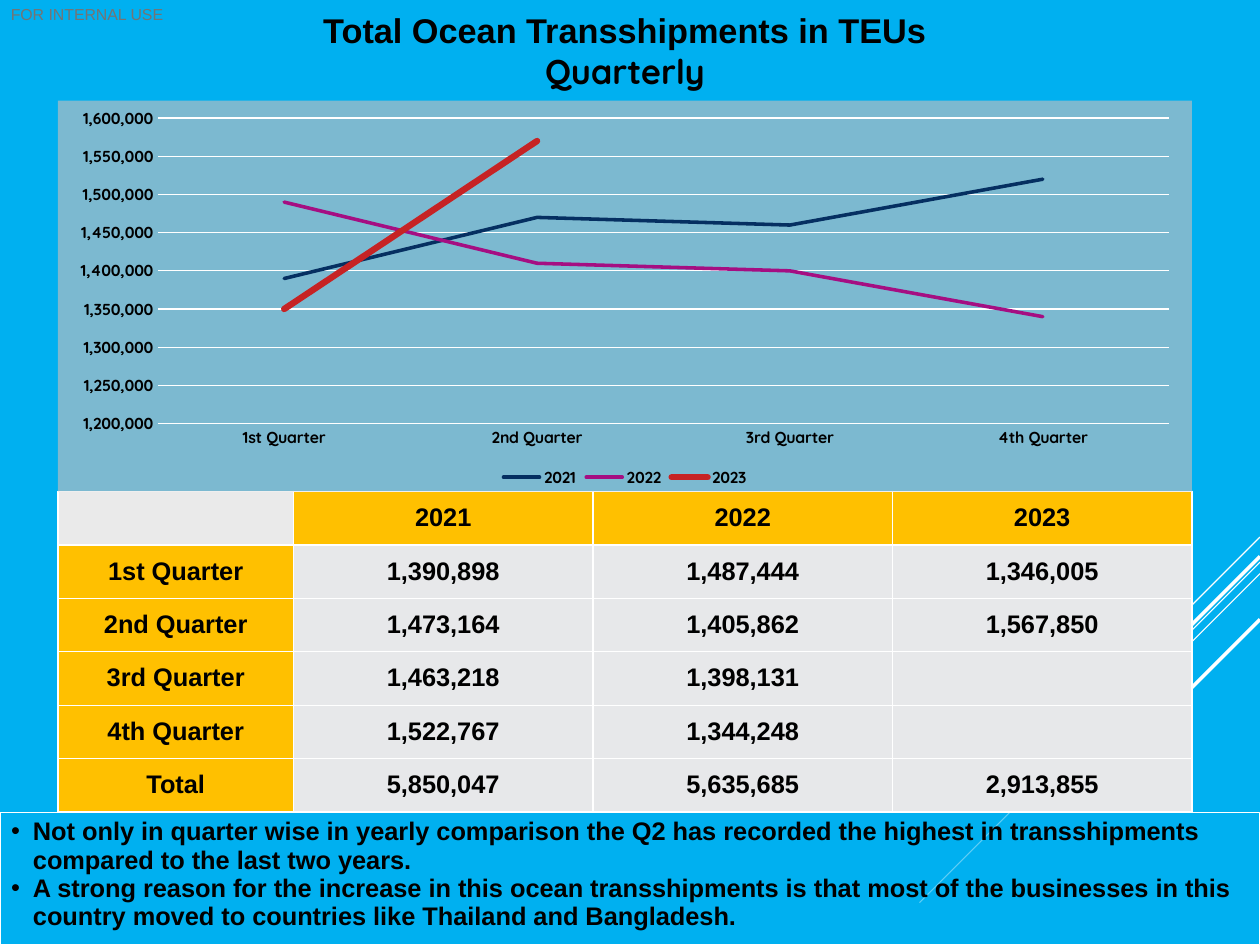
from lxml import etree
from pptx import Presentation
from pptx import util as u
from pptx.chart.data import CategoryChartData
from pptx.dml.color import RGBColor
from pptx.enum import chart as charts, shapes, text
from pptx.oxml import parse_xml
from pptx.oxml.ns import nsdecls, qn

COLORS = {
    "sky": "00B0F0", "white": "FFFFFF", "black": "000000", "gray": "747474",
    "gold": "FFC000", "corner": "EAEAEA", "cell": "E7E8EA", "panel": "BFBFBF",
    "2021": "052F61", "2022": "A50E82", "2023": "C62324",
}
WIDTH, HEIGHT = u.Cm(28), u.Cm(21)
LEFT, SPAN = 4.6, 90  # shares of the slide width, in percent
CHART_TOP, TABLE_TOP, NOTES_TOP = 10.64, 52, 85.97  # shares of the slide height

QUARTERS = ["1st Quarter", "2nd Quarter", "3rd Quarter", "4th Quarter"]
TEUS = {
    "2021": [1390898, 1473164, 1463218, 1522767],
    "2022": [1487444, 1405862, 1398131, 1344248],
    "2023": [1346005, 1567850, None, None],
}
STRIPES = [  # top, drop, line weight
    (56.83, 11, 0.75), (59.49, 36.03, 0.75), (60.7, 22.85, 0.75),
    (58.89, 20.98, 2.25), (65.54, 15.24, 2.25),
]
NOTES = [
    "Not only in quarter wise in yearly comparison the Q2 has recorded the highest "
    "in transshipments compared to the last two years.",
    "A strong reason for the increase in this ocean transshipments is that most of the "
    "businesses in this country moved to countries like Thailand and Bangladesh.",
]


def rgb(name):
    return RGBColor.from_string(COLORS[name])


def style_font(font, size=16, face="Arial", color="black", bold=True):
    font.size, font.name, font.bold = u.Pt(size), face, bold
    font.color.rgb = rgb(color)


def write(paragraph, words, align=text.PP_ALIGN.CENTER, spacing=0.93, **font):
    paragraph.alignment, paragraph.line_spacing = align, spacing
    run = paragraph.add_run()
    run.text = words
    style_font(run.font, **font)


def set_opacity(properties, percent):
    """Make the solid fill of a shape-properties element translucent."""
    color = properties.find(qn("a:solidFill"))[0]
    etree.SubElement(color, qn("a:alpha")).set("val", str(percent * 1000))


class Board:
    """Adds elements to one slide; lengths are percent of the slide's size."""

    def __init__(self, presentation):
        self.slide = presentation.slides.add_slide(presentation.slide_layouts[5])
        self.slide.background.fill.solid()
        self.slide.background.fill.fore_color.rgb = rgb("sky")

    def box(self, left, top, width, height):
        sizes = (WIDTH, HEIGHT, WIDTH, HEIGHT)
        return [u.Emu(int(share * size / 100))
                for share, size in zip((left, top, width, height), sizes)]

    def stripe(self, top, drop, weight):
        """Draw a 45 degree line down and left from the right edge."""
        run = drop * HEIGHT / WIDTH
        ends = self.box(100, top, 100 - run, top + drop)
        line = self.slide.shapes.add_connector(shapes.MSO_CONNECTOR.STRAIGHT, *ends)
        line.line.color.rgb, line.line.width = rgb("white"), u.Pt(weight)
        etree.SubElement(line.element.spPr, qn("a:effectLst"))

    def label(self, words, *place):
        frame = self.slide.shapes.add_textbox(*self.box(*place)).text_frame
        frame.margin_left = frame.margin_right = frame.margin_top = frame.margin_bottom = 0
        frame.vertical_anchor, frame.word_wrap = text.MSO_ANCHOR.MIDDLE, True
        write(frame.paragraphs[0], words, size=10, color="gray", bold=False)

    def title(self, first, second, *place):
        title = self.slide.shapes.title
        title.left, title.top, title.width, title.height = self.box(*place)
        frame = title.text_frame
        frame.auto_size, frame.vertical_anchor = text.MSO_AUTO_SIZE.NONE, text.MSO_ANCHOR.MIDDLE
        paragraph = frame.paragraphs[0]
        write(paragraph, first, spacing=1.0, size=21.6)
        paragraph.add_line_break()
        write(paragraph, second, spacing=1.0, size=21.6, face="Quicksand")

    def bullets(self, notes, *place):
        shape = self.slide.shapes.add_shape(shapes.MSO_SHAPE.RECTANGLE, *self.box(*place))
        shape.shadow.inherit = False
        shape.fill.solid()
        shape.fill.fore_color.rgb = rgb("sky")
        set_opacity(shape.element.spPr, 63)
        shape.line.color.rgb, shape.line.width = rgb("white"), u.Pt(0.75)
        frame = shape.text_frame
        frame.vertical_anchor, frame.word_wrap = text.MSO_ANCHOR.TOP, True
        for index, note in enumerate(notes):
            paragraph = frame.add_paragraph() if index else frame.paragraphs[0]
            write(paragraph, note, align=text.PP_ALIGN.LEFT)
            properties = paragraph._p.get_or_add_pPr()
            indent = u.Inches(0.19)
            properties.set("marL", str(indent))
            properties.set("indent", str(-indent))
            color = etree.SubElement(properties, qn("a:buClr"))
            etree.SubElement(color, qn("a:srgbClr")).set("val", COLORS["black"])
            etree.SubElement(properties, qn("a:buFont")).set("typeface", "Arial")
            etree.SubElement(properties, qn("a:buChar")).set("char", "•")

    def cell(self, cell, words, color):
        cell.margin_left = cell.margin_right = cell.margin_top = u.Inches(0.01)
        cell.margin_bottom = 0
        cell.vertical_anchor = text.MSO_ANCHOR.MIDDLE
        cell.fill.solid()
        cell.fill.fore_color.rgb = rgb(color)
        if words:
            write(cell.text_frame.paragraphs[0], words)
        for index, side in enumerate("LRTB"):
            cell._tc.get_or_add_tcPr().insert(index, parse_xml(
                f'<a:ln{side} {nsdecls("a")} w="{u.Pt(1)}"><a:solidFill>'
                f'<a:srgbClr val="{COLORS["white"]}"/></a:solidFill></a:ln{side}>'))

    def table(self, rows, first_share, *place):
        """Fill a table whose first column takes first_share percent of its width."""
        area = self.box(*place)
        table = self.slide.shapes.add_table(len(rows), len(rows[0]), *area).table
        table.horz_banding = False
        rest = (100 - first_share) / (len(rows[0]) - 1)
        for index, column in enumerate(table.columns):
            column.width = int(area[2] * (rest if index else first_share) / 100)
        for row, values in enumerate(rows):
            for column, words in enumerate(values):
                color = "cell" if row and column else "gold" if row or column else "corner"
                self.cell(table.cell(row, column), words, color)

    def line_chart(self, categories, series, *place):
        data = CategoryChartData(number_format="#,##0")
        data.categories = categories
        for name, values in series.items():
            data.add_series(name, [value and round(value, -4) for value in values])
        chart = self.slide.shapes.add_chart(
            charts.XL_CHART_TYPE.LINE, *self.box(*place), data).chart
        style_font(chart.font, size=10, face="Quicksand")
        chart.has_title = False
        chart.has_legend = True
        chart.legend.position = charts.XL_LEGEND_POSITION.BOTTOM
        chart.legend.include_in_layout = False
        style_font(chart.legend.font, size=10, face="Quicksand")
        plot = chart.plots[0]
        plot.vary_by_categories = False
        for line in plot.series:
            line.smooth = False
            line.format.line.color.rgb = rgb(line.name)
            line.format.line.width = u.Pt(4 if line.name == "2023" else 2.25)
            line.format.line._ln.set("cap", "rnd")
        for axis in (chart.category_axis, chart.value_axis):
            axis.major_tick_mark = axis.minor_tick_mark = charts.XL_TICK_MARK.NONE
            style_font(axis.tick_labels.font, size=10, face="Quicksand")
        values = chart.value_axis
        values.minimum_scale, values.maximum_scale, values.major_unit = 1200000, 1600000, 50000
        values.tick_labels.number_format = "#,##0"
        values.tick_labels.number_format_is_linked = False
        values.format.line.fill.background()
        for rule in (chart.category_axis.format.line, values.major_gridlines.format.line):
            rule.color.rgb, rule.width = rgb("white"), u.Pt(0.75)
        self.chart_area(chart, x=8.8, y=4.5, w=89.2, h=78.2)

    def chart_area(self, chart, **shares):
        """Give the chart its translucent panel and place the plot inside it."""
        root = chart.element
        panel = parse_xml(
            f'<c:spPr {nsdecls("c", "a")}><a:solidFill><a:srgbClr val="{COLORS["panel"]}"/>'
            '</a:solidFill><a:ln><a:noFill/></a:ln></c:spPr>')
        set_opacity(panel, 65)
        root.find(qn("c:chart")).addnext(panel)
        plot_area = root.find(".//" + qn("c:plotArea"))
        for old in plot_area.findall(qn("c:layout")):
            plot_area.remove(old)
        modes = '<c:layoutTarget val="inner"/><c:xMode val="edge"/><c:yMode val="edge"/>'
        sides = "".join(f'<c:{side} val="{share / 100}"/>' for side, share in shares.items())
        plot_area.insert(0, parse_xml(
            f'<c:layout {nsdecls("c")}><c:manualLayout>{modes}{sides}</c:manualLayout></c:layout>'))


def table_rows():
    rows = [["", *TEUS]]
    columns = [[*values, sum(filter(None, values))] for values in TEUS.values()]
    for name, *values in zip([*QUARTERS, "Total"], *columns):
        rows.append([name, *(f"{value:,}" if value else "" for value in values)])
    return rows


def main():
    presentation = Presentation()
    presentation.slide_width, presentation.slide_height = WIDTH, HEIGHT
    board = Board(presentation)
    for stripe in STRIPES:
        board.stripe(*stripe)
    board.label("FOR INTERNAL USE", 0, 0, 13.79, 3.14)
    board.title("Total Ocean Transshipments in TEUs", "Quarterly", LEFT, 0, SPAN, CHART_TOP)
    board.bullets(NOTES, 0, NOTES_TOP, 100, 100 - NOTES_TOP)
    board.table(table_rows(), 20.77, LEFT, TABLE_TOP, SPAN, NOTES_TOP - TABLE_TOP)
    board.line_chart(QUARTERS, TEUS, LEFT, CHART_TOP, SPAN, TABLE_TOP - CHART_TOP)
    presentation.save("out.pptx")


if __name__ == "__main__":
    main()
